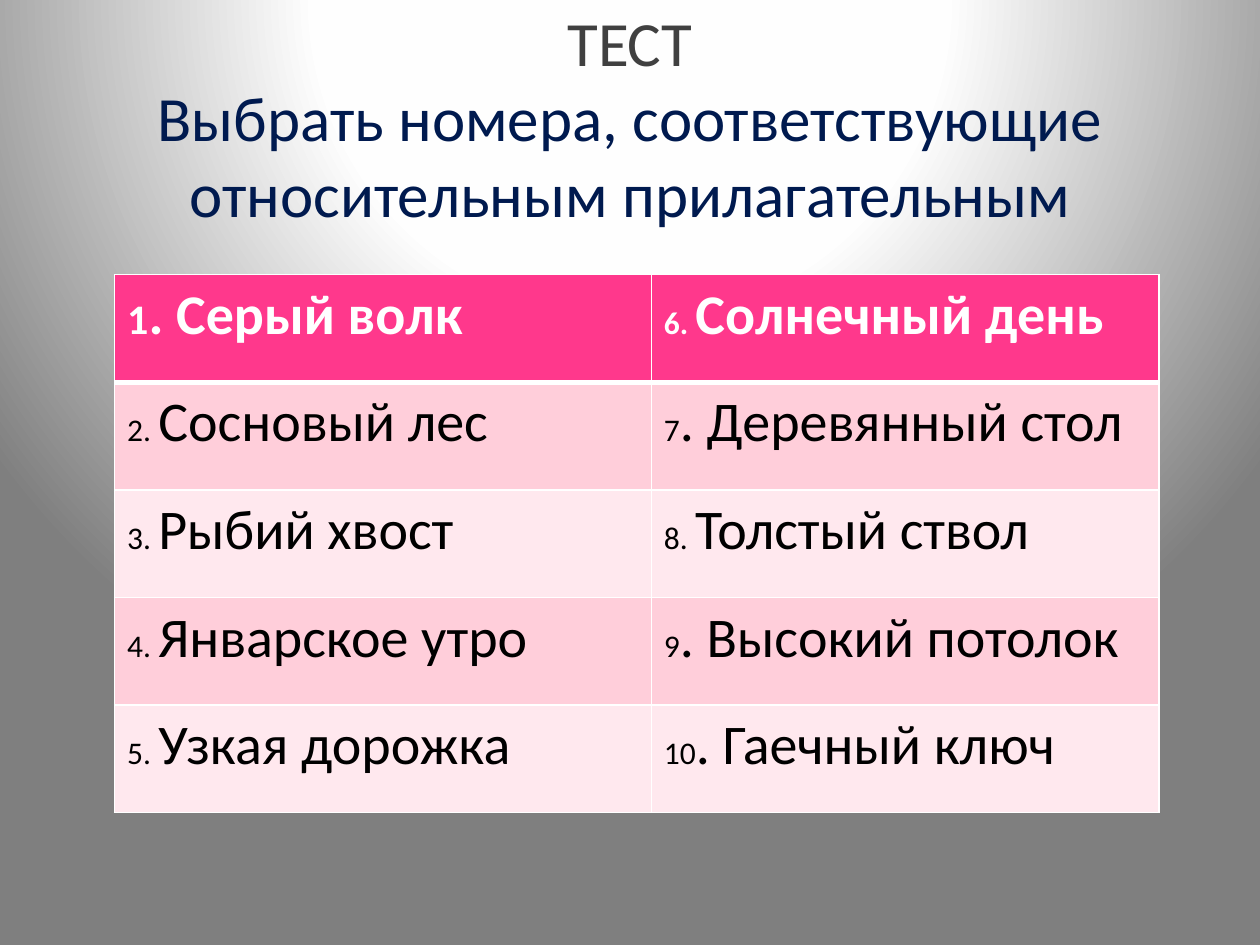
from lxml import etree
from pptx import Presentation
from pptx import oxml
from pptx import util as u
from pptx.dml.color import RGBColor
from pptx.enum import text

COLORS = {
    "white": "FFFFFF", "glow": "FEFEFE", "edge": "7F7F7F",
    "heading": "404040", "task": "001A4F", "ink": "000000",
    "header": "FF388C", "odd": "FFCEDA", "even": "FFE8EE",
}
FONT = "Calibri"
NAMESPACE = "http://schemas.openxmlformats.org/drawingml/2006/main"
ROWS = [
    [("1", ". Серый волк"), ("6. ", "Солнечный день")],
    [("2. ", "Сосновый лес"), ("7", ". Деревянный стол")],
    [("3. ", "Рыбий хвост"), ("8. ", "Толстый ствол")],
    [("4. ", "Январское утро"), ("9", ". Высокий потолок")],
    [("5. ", "Узкая дорожка"), ("10", ". Гаечный ключ")],
]


def color(name):
    return RGBColor.from_string(COLORS[name])


def add_background(page):
    page.background.fill.solid()
    properties = page.background._cSld.bg.bgPr
    stops = "".join(
        f'<a:gs pos="{position * 1000}"><a:srgbClr val="{COLORS[name]}"/></a:gs>'
        for position, name in [(0, "white"), (40, "glow"), (100, "edge")]
    )
    gradient = oxml.parse_xml(
        f'<a:gradFill xmlns:a="{NAMESPACE}" rotWithShape="1"><a:gsLst>{stops}</a:gsLst>'
        '<a:path path="circle"><a:fillToRect l="50000" t="-80000" r="50000" b="180000"/>'
        "</a:path></a:gradFill>"
    )
    properties.replace(properties[0], gradient)


def add_title(page, left, top, width, height):
    title = page.shapes.title
    title.left, title.top, title.width, title.height = left, top, width, height
    frame = title.text_frame
    frame.word_wrap = True
    frame.auto_size = text.MSO_AUTO_SIZE.NONE
    frame.vertical_anchor = text.MSO_ANCHOR.MIDDLE
    para = frame.paragraphs[0]
    para.alignment = text.PP_ALIGN.CENTER
    para.font.name, para.font.size = FONT, u.Pt(36)
    heading = para.add_run()
    heading.text = "ТЕСТ"
    heading.font.size = u.Pt(36)
    heading.font.color.rgb = color("heading")
    para.add_line_break()
    task = para.add_run()
    task.text = "Выбрать номера, соответствующие относительным прилагательным"
    task.font.color.rgb = color("task")


def set_borders(cell, top, bottom):
    properties = cell._tc.get_or_add_tcPr()
    for side, points in [("L", 1), ("R", 1), ("T", top), ("B", bottom)]:
        line = etree.SubElement(properties, f"{{{NAMESPACE}}}ln{side}", w=str(u.Pt(points)))
        fill = etree.SubElement(line, f"{{{NAMESPACE}}}solidFill")
        etree.SubElement(fill, f"{{{NAMESPACE}}}srgbClr", val=COLORS["white"])


def add_answers(page, left, top, width, height):
    table = page.shapes.add_table(len(ROWS), 2, left, top, width, height).table
    table.columns[0].width = u.Inches(4.26)
    table.columns[1].width = width - u.Inches(4.26)
    for r, row in enumerate(ROWS):
        is_header = r == 0
        fill = "header" if is_header else ("odd" if r % 2 else "even")
        for c, (number, phrase) in enumerate(row):
            cell = table.cell(r, c)
            set_borders(cell, 3 if r == 1 else 1, 3 if is_header else 1)
            cell.fill.solid()
            cell.fill.fore_color.rgb = color(fill)
            para = cell.text_frame.paragraphs[0]
            para.font.name = FONT
            para.font.bold = is_header
            para.font.color.rgb = color("white" if is_header else "ink")
            number_size = 24 if number == "1" else 18
            for words, size in [(number, number_size), (phrase, 32)]:
                span = para.add_run()
                span.text = words
                span.font.size = u.Pt(size)


def main():
    deck = Presentation()
    deck.slide_width, deck.slide_height = u.Inches(10), u.Inches(7.5)
    page = deck.slides.add_slide(deck.slide_layouts[5])
    add_background(page)
    add_title(page, u.Inches(0.5), u.Inches(0.3), u.Inches(9), u.Inches(1.25))
    add_answers(page, u.Inches(0.91), u.Inches(2.18), u.Inches(8.29), u.Inches(4.27))
    deck.save("out.pptx")


if __name__ == "__main__":
    main()
